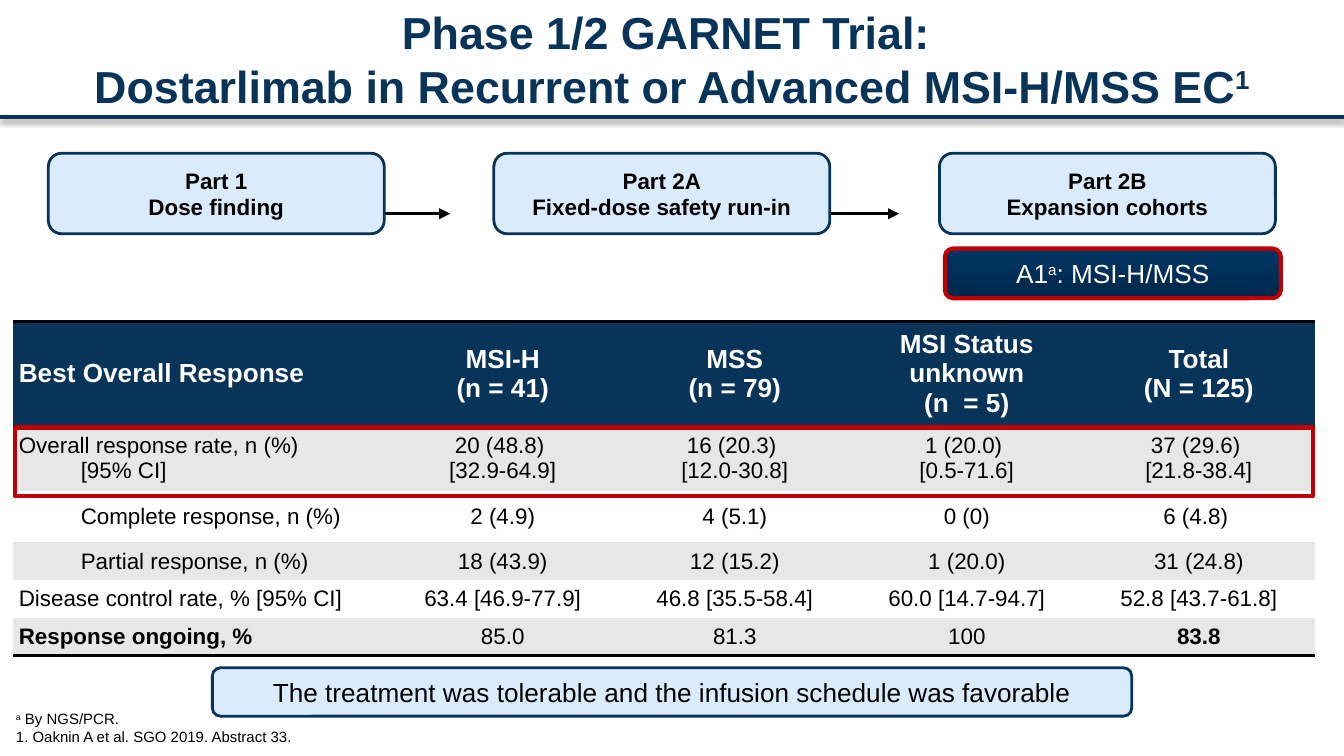
import pptx
import pptx.util
import pptx.dml.color
import pptx.enum.shapes
import pptx.enum.text
import pptx.oxml
import pptx.oxml.ns
import lxml.etree

Pt = pptx.util.Pt
SHAPE = pptx.enum.shapes.MSO_SHAPE
ALIGN = pptx.enum.text.PP_ALIGN
ANCHOR = pptx.enum.text.MSO_ANCHOR

NAVY, PALE, RED = "09345A", "DAEBFB", "C00000"
BLACK, WHITE, GREY = "000000", "FFFFFF", "E7E7E7"

# Text between carets is superscript; \n is a line break.
TITLE = "Phase 1/2 GARNET Trial: \nDostarlimab in Recurrent or Advanced MSI-H/MSS EC^1^"
PARTS = [
    ["Part 1", "Dose finding"],
    ["Part 2A", "Fixed-dose safety run-in"],
    ["Part 2B", "Expansion cohorts"],
]
COHORT = "A1^a^: MSI-H/MSS"
FINDING = "The treatment was tolerable and the infusion schedule was favorable"
NOTES = "^a^ By NGS/PCR.\n1. Oaknin A et al. SGO 2019. Abstract 33."

HEADS = [
    ["Best Overall Response"],
    ["MSI-H", "(n = 41)"],
    ["MSS", "(n = 79)"],
    ["MSI Status unknown", "(n  = 5)"],
    ["Total", "(N = 125)"],
]
# A label that starts with > is indented.
ROWS = [
    [["Overall response rate, n (%)", ">[95% CI]"], ["20 (48.8) \n[32.9-64.9]"],
     ["16 (20.3) \n[12.0-30.8]"], ["1 (20.0) \n[0.5-71.6]"], ["37 (29.6) \n[21.8-38.4]"]],
    [[">Complete response, n (%)"], ["2 (4.9)"], ["4 (5.1)"], ["0 (0)"], ["6 (4.8) "]],
    [[">Partial response, n (%)"], ["18 (43.9)"], ["12 (15.2)"], ["1 (20.0)"], ["31 (24.8)"]],
    [["Disease control rate, % [95% CI]"], ["63.4 [46.9-77.9]"], ["46.8 [35.5-58.4]"],
     ["60.0 [14.7-94.7]"], ["52.8 [43.7-61.8]"]],
    [["Response ongoing, %"], ["85.0"], ["81.3"], ["100"], ["83.8"]],
]
BOLD = {(5, 0), (5, 4)}
WIDTHS = [200, 124.3, 124.3, 124.3, 124.3]
HEIGHTS = [53.2, 32.6, 27.6, 19.6, 19.6, 19.6]


def rgb(code):
    return pptx.dml.color.RGBColor.from_string(code)


def write(frame, paras, size, color=BLACK, bold=False, align=ALIGN.CENTER):
    frame.word_wrap = True
    for i, text in enumerate(paras):
        para = frame.paragraphs[0] if i == 0 else frame.add_paragraph()
        para.alignment = align
        if text.startswith(">"):
            para._p.get_or_add_pPr().set("marL", str(Pt(33.2)))
            text = text[1:]
        for j, line in enumerate(text.split("\n")):
            if j:
                para.add_line_break()
            for k, part in enumerate(line.split("^")):
                if not part:
                    continue
                run = para.add_run()
                run.text = part
                font = run.font
                font.name, font.size, font.bold = "Arial", Pt(size), bold
                font.color.rgb = rgb(color)
                if k % 2:
                    font._element.set("baseline", "30000")


def label(box, paras, size, anchor, align=ALIGN.CENTER, **look):
    text = slide.shapes.add_textbox(*map(Pt, box)).text_frame
    text.vertical_anchor = anchor
    write(text, paras, size, align=align, **look)
    return text


def block(kind, box, fill, edge, width):
    shape = slide.shapes.add_shape(kind, *map(Pt, box))
    shape.shadow.inherit = False
    if fill:
        shape.fill.solid()
        shape.fill.fore_color.rgb = rgb(fill)
    else:
        shape.fill.background()
    shape.line.color.rgb = rgb(edge)
    shape.line.width = Pt(width)
    shape.text_frame.vertical_anchor = ANCHOR.MIDDLE
    return shape


def rule(left, right, y, color, width):
    """Draw a level line and return it with its empty effect list."""
    line = slide.shapes.add_connector(
        pptx.enum.shapes.MSO_CONNECTOR.STRAIGHT, Pt(left), Pt(y), Pt(right), Pt(y))
    line.line.color.rgb = rgb(color)
    line.line.width = Pt(width)
    effect = lxml.etree.SubElement(line._element.spPr, pptx.oxml.ns.qn("a:effectLst"))
    return line, effect


def border(cell, sides):
    props = cell._tc.get_or_add_tcPr()
    for i, side in enumerate(sides):
        props.insert(i, pptx.oxml.parse_xml(
            f'<a:{side} {pptx.oxml.ns.nsdecls("a")} w="{Pt(2)}"><a:solidFill>'
            f'<a:srgbClr val="{BLACK}"/></a:solidFill></a:{side}>'))


deck = pptx.Presentation()
deck.slide_width, deck.slide_height = Pt(720), Pt(405)
slide = deck.slides.add_slide(deck.slide_layouts[6])

# Title and footnotes
_, effect = rule(0, 720, 62.8, NAVY, 2)
effect.append(pptx.oxml.parse_xml(
    f'<a:outerShdw {pptx.oxml.ns.nsdecls("a")} blurRad="{Pt(3.1)}" dist="{Pt(1.6)}" '
    f'dir="5400000"><a:srgbClr val="{BLACK}"><a:alpha val="38000"/></a:srgbClr></a:outerShdw>'))
notes = label((5, 380.2, 612, 19.4), [NOTES], 8, ANCHOR.BOTTOM, ALIGN.LEFT)
notes.margin_left = notes.margin_top = Pt(3.6)
notes.margin_bottom = 0
label((7.2, 2.2, 705.6, 58.3), [TITLE], 24, ANCHOR.MIDDLE, color=NAVY, bold=True)

# Response table
frame = slide.shapes.add_table(
    len(HEIGHTS), len(WIDTHS), Pt(7.2), Pt(172.1), Pt(sum(WIDTHS)), Pt(sum(HEIGHTS)))
table = frame.table
plain = "{2D5ABB26-0587-4C30-8999-92F81FD0307C}"
table._tbl.tblPr.find(pptx.oxml.ns.qn("a:tableStyleId")).text = plain
for col, width in zip(table.columns, WIDTHS):
    col.width = Pt(width)
for r, (height, row) in enumerate(zip(HEIGHTS, [HEADS] + ROWS)):
    table.rows[r].height = Pt(height)
    for c, paras in enumerate(row):
        cell = table.cell(r, c)
        cell.margin_left = cell.margin_right = Pt(2.9)
        cell.margin_top = cell.margin_bottom = Pt(2.9)
        cell.vertical_anchor = ANCHOR.MIDDLE
        cell.fill.solid()
        cell.fill.fore_color.rgb = rgb(NAVY if r == 0 else GREY if r % 2 else WHITE)
        align = ALIGN.CENTER if c else ALIGN.LEFT
        if r == 0:
            write(cell.text_frame, paras, 14, WHITE, True, align)
            border(cell, ["lnT", "lnB"])
        else:
            write(cell.text_frame, paras, 12, BLACK, (r, c) in BOLD, align)
        if r == len(ROWS):
            border(cell, ["lnB"])
block(SHAPE.RECTANGLE, (7.9, 229, 695.5, 36.7), None, RED, 2.25)

# Trial parts, with arrows running out from behind the boxes
for left in (344.9, 104.4):
    arrow, _ = rule(left, left + 136.8, 114.5, BLACK, 1.5)
    tail = lxml.etree.SubElement(arrow.line._get_or_add_ln(), pptx.oxml.ns.qn("a:tailEnd"))
    tail.set("type", "triangle")
for i, paras in enumerate(PARTS):
    part = block(SHAPE.ROUNDED_RECTANGLE, (25.9 + 238.7 * i, 82.1, 180, 43.2), PALE, NAVY, 1.5)
    write(part.text_frame, paras, 12, bold=True)

cohort = block(SHAPE.ROUNDED_RECTANGLE, (506.2, 133.2, 180, 26.6), NAVY, RED, 2.25)
cohort.fill.gradient()
cohort.fill.gradient_angle = 90
for stop, place, color in zip(cohort.fill.gradient_stops, (0, 0.8), ("00274A", "003360")):
    stop.position = place
    stop.color.rgb = rgb(color)
write(cohort.text_frame, [COHORT], 14, WHITE)

finding = block(SHAPE.ROUNDED_RECTANGLE, (113.8, 357.8, 492.5, 25.9), PALE, NAVY, 1.5)
write(finding.text_frame, [FINDING], 14)

deck.save("out.pptx")
